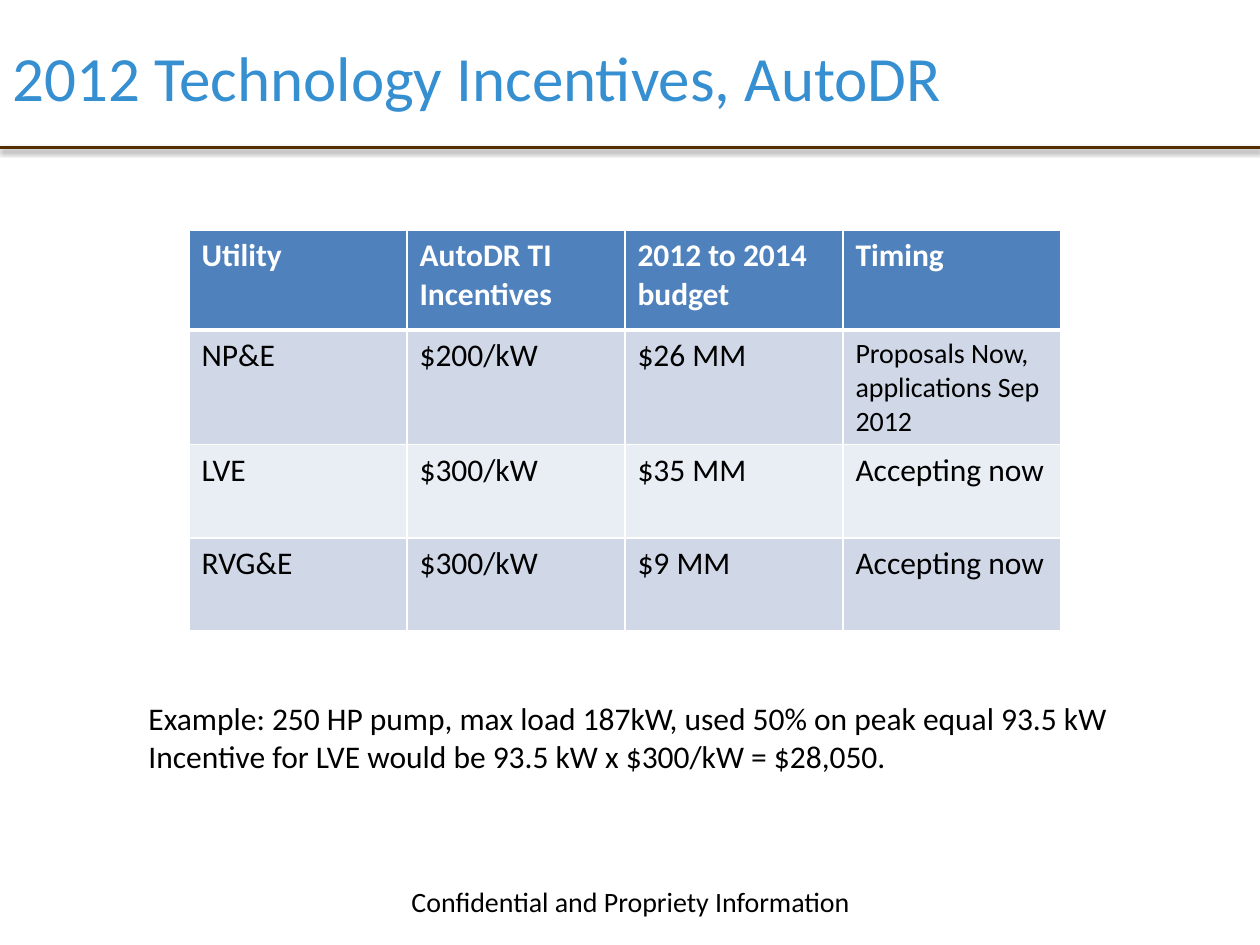
"""Build the AutoDR technology incentives slide."""
import pptx
import pptx.dml.color
import pptx.enum.shapes
import pptx.enum.text
import pptx.oxml
import pptx.oxml.ns
import pptx.util

Inches = pptx.util.Inches
ALIGN = pptx.enum.text.PP_ALIGN
ANCHOR = pptx.enum.text.MSO_ANCHOR

TITLE = "2012 Technology Incentives, AutoDR"
INCENTIVES = [
    ["Utility", "AutoDR TI Incentives", "2012 to 2014 budget", "Timing"],
    ["NP&E", "$200/kW", "$26 MM", "Proposals Now, applications Sep 2012"],
    ["LVE", "$300/kW", "$35 MM", "Accepting now"],
    ["RVG&E", "$300/kW", "$9 MM", "Accepting now"],
]
EXAMPLE = [
    "Example: 250 HP pump, max load 187kW, used 50% on peak equal 93.5 kW",
    "Incentive for LVE would be 93.5 kW x $300/kW = $28,050.",
]
FOOTER = "Confidential and Propriety Information"
ROW_HEIGHTS = [0.79, 0.91, 0.74, 0.74]
ROW_FILLS = ["4F81BD", "D0D8E8", "E9EDF4", "D0D8E8"]
NAMESPACE = pptx.oxml.ns.nsdecls("a")
SHADOW = (
    f'<a:effectLst {NAMESPACE}><a:outerShdw blurRad="39370" dist="20320" dir="5400000" '
    'rotWithShape="0"><a:srgbClr val="000000"><a:alpha val="38000"/></a:srgbClr>'
    "</a:outerShdw></a:effectLst>"
)


def color(value):
    return pptx.dml.color.RGBColor.from_string(value)


def write(frame, lines, size, ink="000000", align=ALIGN.LEFT, bold=False):
    for index, line in enumerate(lines):
        paragraph = frame.paragraphs[0] if index == 0 else frame.add_paragraph()
        paragraph.text = line
        paragraph.alignment = align
        formats = {"name": "Calibri", "size": pptx.util.Pt(size), "bold": bold}
        for name, value in formats.items():
            setattr(paragraph.font, name, value)
        paragraph.font.color.rgb = color(ink)


def set_frame(frame, **formats):
    for name, value in formats.items():
        setattr(frame, name, value)


def place(shape, *box):
    for name, value in zip(("left", "top", "width", "height"), box):
        setattr(shape, name, Inches(value))


def add_borders(cell, widths):
    properties = cell._tc.get_or_add_tcPr()
    for side, width in widths.items():
        properties.append(pptx.oxml.parse_xml(
            f'<a:ln{side} {NAMESPACE} w="{pptx.util.Pt(width)}"><a:solidFill>'
            f'<a:srgbClr val="FFFFFF"/></a:solidFill></a:ln{side}>'))


def add_incentive_table(slide):
    box = [Inches(value) for value in (1.5, 1.83, 6.92, sum(ROW_HEIGHTS))]
    table = slide.shapes.add_table(len(INCENTIVES), len(INCENTIVES[0]), *box).table
    for row_index, texts in enumerate(INCENTIVES):
        table.rows[row_index].height = Inches(ROW_HEIGHTS[row_index])
        header = row_index == 0
        for column_index, text in enumerate(texts):
            cell = table.cell(row_index, column_index)
            top, bottom = {0: (1, 3), 1: (3, 1)}.get(row_index, (1, 1))
            add_borders(cell, {"L": 1, "R": 1, "T": top, "B": bottom})
            cell.fill.solid()
            cell.fill.fore_color.rgb = color(ROW_FILLS[row_index])
            size = 16 if len(text) > 30 else 18
            write(cell.text_frame, [text], size, "FFFFFF" if header else "000000", bold=header)


def add_text(slide, box, lines, size, align=ALIGN.LEFT, **formats):
    shape = slide.shapes.add_textbox(*map(Inches, box))
    set_frame(shape.text_frame, **formats)
    write(shape.text_frame, lines, size, align=align)


def main():
    presentation = pptx.Presentation()
    presentation.slide_width, presentation.slide_height = Inches(10), Inches(7.5)
    slide = presentation.slides.add_slide(presentation.slide_layouts[5])

    add_text(slide, (2.92, 6.95, 4.17, 0.4), [FOOTER], 16, ALIGN.CENTER,
             word_wrap=True, vertical_anchor=ANCHOR.MIDDLE)

    title = slide.shapes.title
    place(title, 0, -0.02, 9, 1.25)
    set_frame(title.text_frame, vertical_anchor=ANCHOR.MIDDLE, word_wrap=True)
    write(title.text_frame, [TITLE], 36, "358FD0")

    add_incentive_table(slide)
    add_text(slide, (1.08, 5.5, 7.92, 0.71), EXAMPLE, 18, word_wrap=False,
             auto_size=pptx.enum.text.MSO_AUTO_SIZE.SHAPE_TO_FIT_TEXT)

    rule = slide.shapes.add_connector(
        pptx.enum.shapes.MSO_CONNECTOR.STRAIGHT, 0, Inches(1.17), Inches(10), Inches(1.17))
    rule.line.color.rgb = color("532F00")
    rule.line.width = pptx.util.Pt(1.75)
    rule._element.spPr.append(pptx.oxml.parse_xml(SHADOW))

    presentation.save("out.pptx")


if __name__ == "__main__":
    main()
